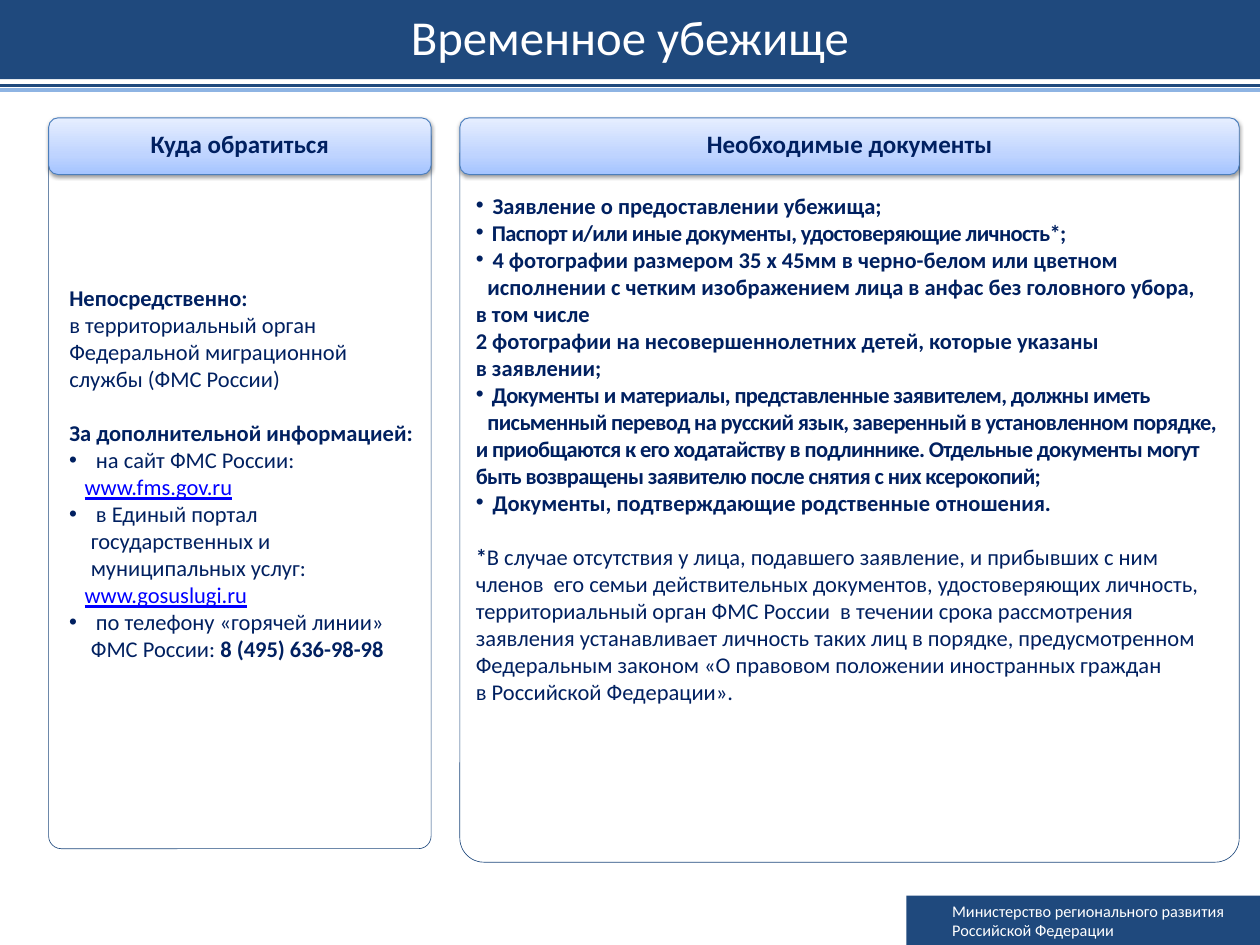
from lxml import etree
from pptx import Presentation
from pptx.dml.color import RGBColor
from pptx.enum.shapes import MSO_CONNECTOR, MSO_SHAPE
from pptx.enum.text import MSO_ANCHOR, PP_ALIGN
from pptx.oxml import parse_xml
from pptx.oxml.ns import nsdecls, qn
from pptx.util import Inches, Pt
from copy import deepcopy

RECT, ROUND = MSO_SHAPE.RECTANGLE, MSO_SHAPE.ROUNDED_RECTANGLE
LINE = MSO_CONNECTOR.STRAIGHT
TOP, MIDDLE = MSO_ANCHOR.TOP, MSO_ANCHOR.MIDDLE
LEFT, CENTER = PP_ALIGN.LEFT, PP_ALIGN.CENTER
COLORS = {"navy": "1F497D", "sky": "8EB4E3", "edge": "4B7EBC", "ink": "002060",
          "link": "0000FF", "white": "FFFFFF", "shade": "000000"}
GRADE = [(0, "A4C4FF"), (0.35, "BFD4FF"), (1, "E6EEFF")]
PITCH = Pt(21.6)

# Each row: kind, gap before, letter spacing, runs of (style, text)
PLACES = [
    ("plain", 0, 0, [("bold", "Непосредственно:")]),
    ("plain", 0, 0, [("text", "в территориальный орган Федеральной миграционной службы (ФМС России)")]),
    ("plain", 1, 0, [("bold", "За дополнительной информацией:")]),
    ("bullet", 0, 0, [("text", " на сайт ФМС России:")]),
    ("site", 0, 0, [("link", "www.fms.gov.ru")]),
    ("bullet", 0, 0, [("text", " в Единый портал государственных и муниципальных услуг:")]),
    ("site", 0, 0, [("link", "www.gosuslugi.ru")]),
    ("bullet", 0, 0, [("text", " по телефону «горячей линии»\nФМС России:"),
                      ("bold", " 8 (495) 636-98-98")]),
]
PAPERS = [
    ("bullet", 0, 0, [("bold", " Заявление о предоставлении убежища;")]),
    ("bullet", 0, -50, [("bold", " Паспорт и/или иные документы, удостоверяющие личность*;")]),
    ("bullet", 0, 0, [("bold", " 4 фотографии размером 35 х 45мм в черно-белом или цветном исполнении "
                               "с четким изображением лица в анфас без головного убора,")]),
    ("plain", 0, 0, [("bold", "в том числе\n2 фотографии на несовершеннолетних детей, которые указаны")]),
    ("plain", 0, 0, [("bold", "в заявлении;")]),
    ("bullet", 0, -50, [("bold", " Документы и материалы, представленные заявителем, должны иметь "
                                 "письменный перевод на русский язык, заверенный в установленном порядке,")]),
    ("plain", 0, -50, [("bold", "и приобщаются к его ходатайству в подлиннике. Отдельные документы могут "
                                "быть возвращены заявителю после снятия с них ксерокопий;")]),
    ("bullet", 0, 0, [("bold", " Документы, подтверждающие родственные отношения.")]),
    ("plain", 1, 0, [("bold", "*"),
                     ("text", "В случае отсутствия у лица, подавшего заявление, и прибывших с ним "
                              "членов  его семьи действительных документов, удостоверяющих личность, "
                              "территориальный орган ФМС России  в течении срока рассмотрения заявления "
                              "устанавливает личность таких лиц в порядке, предусмотренном Федеральным "
                              "законом «О правовом положении иностранных граждан")]),
    ("plain", 0, 0, [("text", "в Российской Федерации».")]),
]
PLACE_TABS = {"plain": (0.09, 0), "bullet": (0.33, -0.24), "site": (0.26, 0)}
PAPER_TABS = {"plain": (0, 0), "bullet": (0.13, -0.13)}


def rgb(name):
    """Return the named colour."""
    return RGBColor.from_string(COLORS[name])


def style(font, size, color, bold=False):
    """Set the face, size, colour and weight of a font."""
    font.name, font.size, font.bold = "Calibri", Pt(size), bold
    font.color.rgb = rgb(color)


def block(slide, kind, box, fill=None, line=None, width=0.5):
    """Add a shape without shadow in the given box."""
    shape = slide.shapes.add_shape(kind, *map(Inches, box))
    shape.shadow.inherit = False
    if fill:
        shape.fill.solid()
        shape.fill.fore_color.rgb = rgb(fill)
    else:
        shape.fill.background()
    if line:
        shape.line.color.rgb = rgb(line)
        shape.line.width = Pt(width)
    else:
        shape.line.fill.background()
    return shape


def label(shape, text, size, color, align=CENTER, bold=False, lead=None):
    """Write one paragraph in the middle of a shape."""
    frame = shape.text_frame
    frame.word_wrap, frame.vertical_anchor = True, MIDDLE
    frame.text = text
    para = frame.paragraphs[0]
    para.alignment, para.line_spacing = align, lead
    for run in para.runs:
        style(run.font, size, color, bold)


def rule(slide, left, top, width, color):
    """Draw a level line."""
    line = slide.shapes.add_connector(
        LINE, Inches(left), Inches(top), Inches(left + width), Inches(top))
    line.line.color.rgb, line.line.width = rgb(color), Pt(3)
    etree.SubElement(line._element.spPr, qn("a:effectLst"))


def banner(slide, left, top, width, height):
    """Place the title bar and the two lines below it."""
    bar = block(slide, RECT, (left, top, width, height), "navy")
    label(bar, "Временное убежище", 39, "white", lead=Pt(40.6))
    for gap, color in ((0.07, "navy"), (0.12, "sky")):
        rule(slide, left, top + height + gap, width, color)


def footer(slide, left, top, width, height):
    """Place the ministry name in a bar."""
    bar = block(slide, RECT, (left, top, width, height), "navy")
    label(bar, "Министерство регионального развития\vРоссийской Федерации", 13, "white", LEFT)
    bar.text_frame.margin_left = Inches(0.51)


def heading(slide, box, text):
    """Place a shaded heading with a soft shadow."""
    shape = block(slide, ROUND, box, line="edge", width=0.75)
    shape.fill.gradient()
    shape.fill.gradient_angle = 90
    stops = shape.fill.gradient_stops
    first = stops[0]._gs
    first.addnext(deepcopy(first))
    for stop, (place, color) in zip(shape.fill.gradient_stops, GRADE):
        stop.position = place
        stop.color.rgb = RGBColor.from_string(color)
    shape._element.spPr.find(qn("a:effectLst")).append(parse_xml(
        f'<a:outerShdw {nsdecls("a")} blurRad="39370" dist="20320" dir="5400000" rotWithShape="0">'
        f'<a:srgbClr val="{COLORS["shade"]}"><a:alpha val="38000"/></a:srgbClr></a:outerShdw>'))
    shape.text_frame.margin_left = shape.text_frame.margin_right = 0
    label(shape, text, 20, "ink", bold=True, lead=Pt(19.6))


def fill_para(para, row, tabs):
    """Write one row of a panel into a paragraph."""
    kind, gap, track, runs = row
    para.alignment, para.line_spacing = LEFT, PITCH
    para.space_before = PITCH * gap
    props = para._p.get_or_add_pPr()
    margin, indent = tabs[kind]
    props.set("marL", str(Inches(margin)))
    props.set("indent", str(Inches(indent)))
    if kind == "bullet":
        etree.SubElement(props, qn("a:buFont")).set("typeface", "Arial")
        etree.SubElement(props, qn("a:buChar")).set("char", "•")
    for look, text in runs:
        for num, part in enumerate(text.split("\n")):
            if num:
                para.add_line_break()
            run = para.add_run()
            run.text = part
            style(run.font, 18, "link" if look == "link" else "ink", look == "bold")
            if look == "link":
                run.font.underline = True
            if track:
                run.font._element.set("spc", str(track))


def panel(slide, box, drop, inset, title, rows, tabs):
    """Place a framed list with its heading on top."""
    left, top, width, height = box
    frame = block(slide, ROUND, (left, top + drop, width, height - drop), line="navy")
    frame.adjustments[0] = 0.033
    body = frame.text_frame
    body.word_wrap, body.vertical_anchor = True, TOP
    body.margin_top = Inches(inset)
    for num, row in enumerate(rows):
        fill_para(body.add_paragraph() if num else body.paragraphs[0], row, tabs)
    heading(slide, (left, top, width, 0.63), title)


def main():
    """Build the slide and save it."""
    deck = Presentation()
    deck.slide_width, deck.slide_height = Inches(14), Inches(10.5)
    slide = deck.slides.add_slide(deck.slide_layouts[6])
    footer(slide, 10.07, 9.95, 3.93, 0.55)
    panel(slide, (0.54, 1.31, 4.25, 8.12), 0.07, 1.74, "Куда обратиться", PLACES, PLACE_TABS)
    panel(slide, (5.11, 1.31, 8.66, 8.27), 0.16, 0.58, "Необходимые документы", PAPERS, PAPER_TABS)
    banner(slide, 0, 0, 14, 0.88)
    deck.save("out.pptx")


if __name__ == "__main__":
    main()
